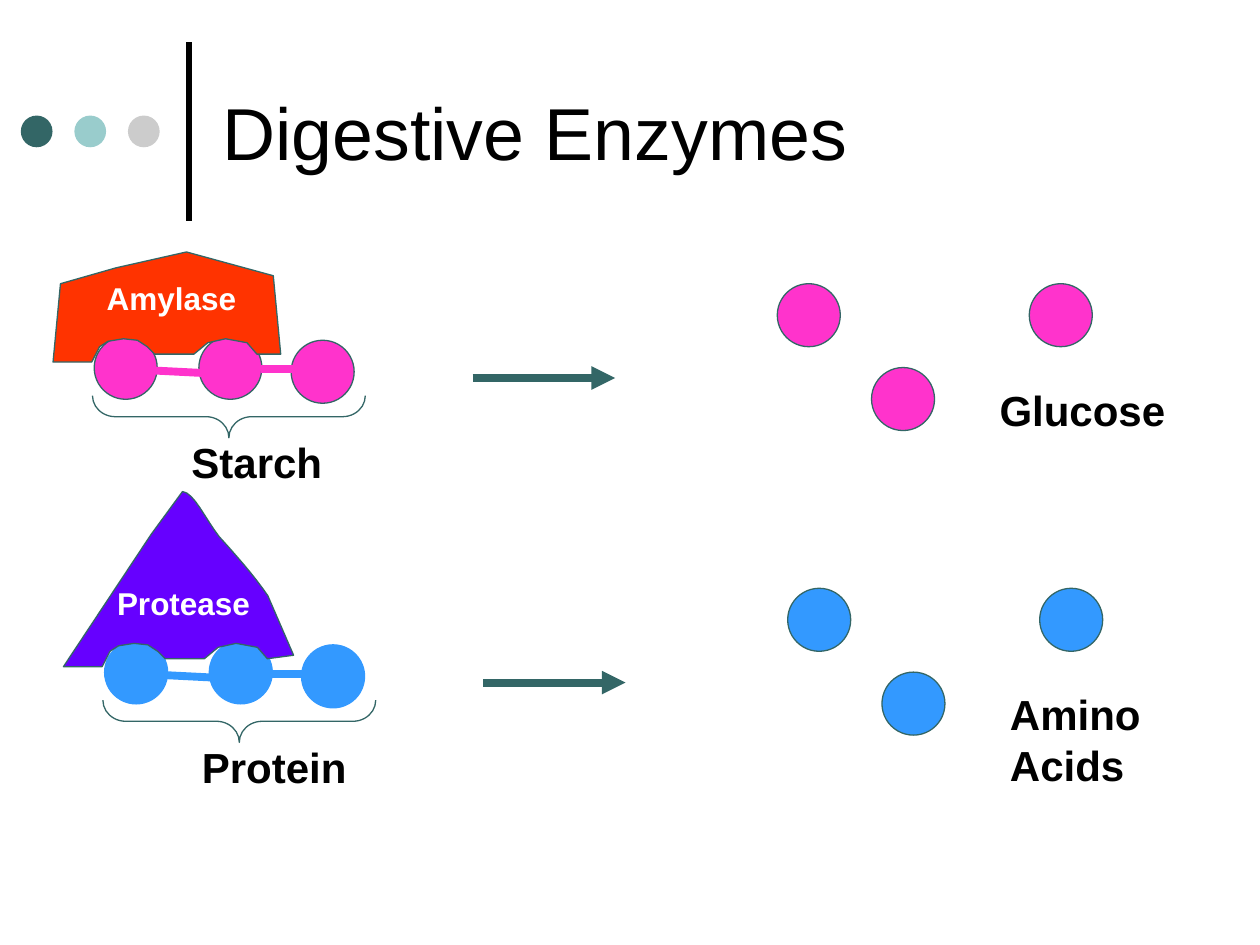
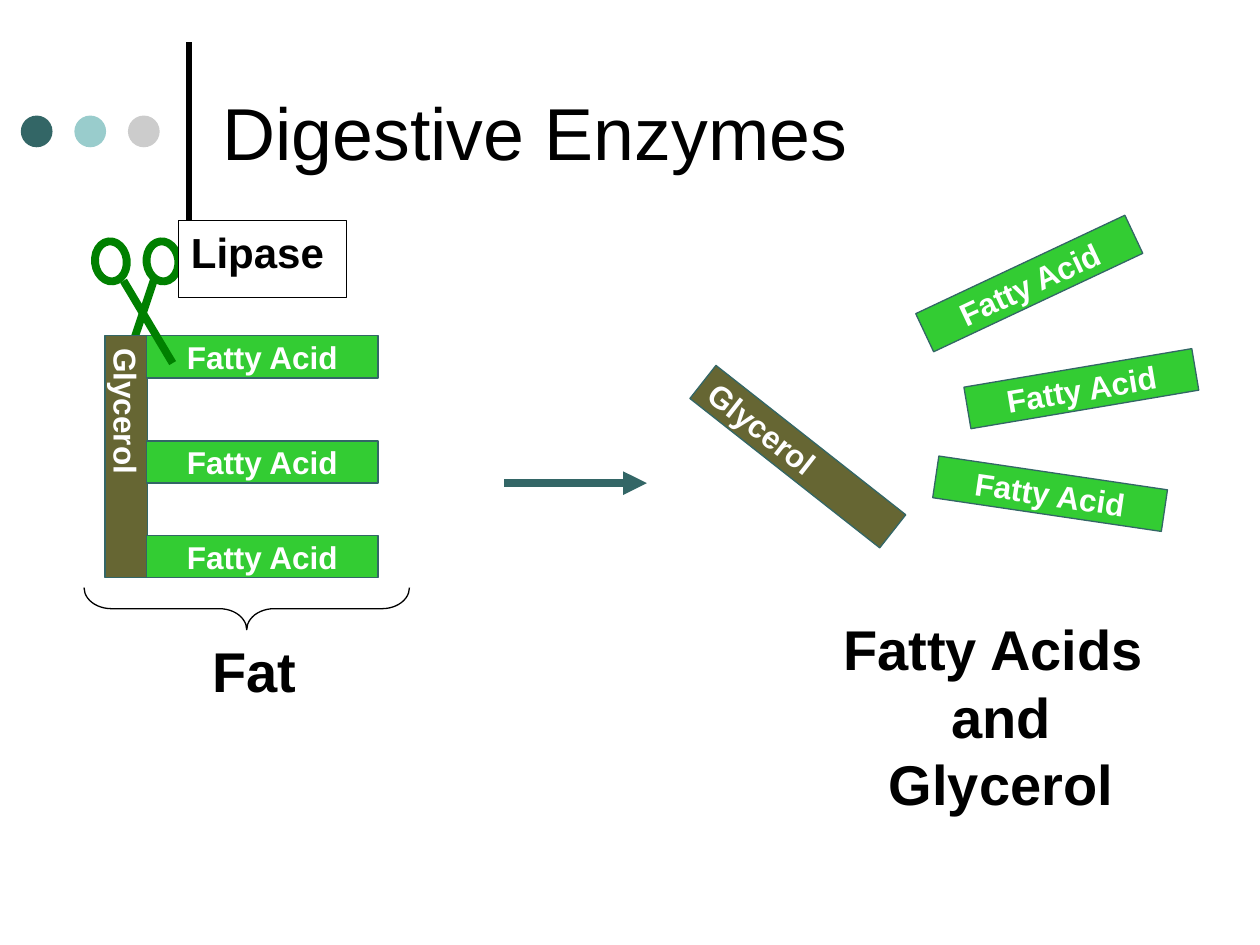
from dataclasses import dataclass
from typing import Optional

from lxml.etree import SubElement
from pptx import Presentation
from pptx.dml.color import RGBColor
from pptx.enum.shapes import MSO_CONNECTOR, MSO_SHAPE as Geo
from pptx.enum.text import MSO_ANCHOR as Anchor, PP_ALIGN as Align
from pptx.oxml.ns import qn
from pptx.shapes.autoshape import Shape
from pptx.slide import Slide
from pptx.text.text import TextFrame
from pptx.util import Cm, Pt

Point = tuple[float, float]
Box = tuple[float, float, float, float]

BLACK = RGBColor(0x00, 0x00, 0x00)
WHITE = RGBColor(0xFF, 0xFF, 0xFF)
TEAL = RGBColor(0x33, 0x66, 0x66)
AQUA = RGBColor(0x99, 0xCC, 0xCC)
GREY = RGBColor(0xCC, 0xCC, 0xCC)
PINK = RGBColor(0xFF, 0x33, 0xCC)
RED = RGBColor(0xFF, 0x33, 0x00)
BLUE = RGBColor(0x33, 0x99, 0xFF)
VIOLET = RGBColor(0x66, 0x00, 0xFF)
OLIVE = RGBColor(0x66, 0x66, 0x33)
GREEN = RGBColor(0x33, 0xCC, 0x33)
DARK_GREEN = RGBColor(0x00, 0x80, 0x00)

THIN, THICK = 0.75, 4.5
UNIT = 1.27
BAR_W, BAR_H, GLYCEROL_H = 4.66, 0.85, 4.87

TITLE = {"size": Pt(42), "bold": False, "color": BLACK}
LARGE = {"size": Pt(32), "bold": True, "color": BLACK}
LABEL = {"size": Pt(24), "bold": True, "color": BLACK}
INNER = {"size": Pt(18), "bold": True, "color": WHITE}


def curve(a: Point, b: Point, c: Point, d: Point, n: int = 8) -> list[Point]:
    """Return n points along a cubic Bezier, leaving out its start."""
    steps = [i / n for i in range(1, n + 1)]
    return [tuple((1 - t) ** 3 * a[k] + 3 * t * (1 - t) ** 2 * b[k]
                  + 3 * t * t * (1 - t) * c[k] + t ** 3 * d[k] for k in (0, 1))
            for t in steps]


BITE = [(1.07, 7.3), (1.85, 7.3), (2.01, 6.99), (2.18, 6.88), (2.49, 6.83),
        (2.77, 6.86), (2.97, 6.99), (3.12, 7.14), (3.91, 7.14), (4.19, 6.91),
        (4.55, 6.83), (4.98, 6.91), (5.18, 7.14)]
AMYLASE_TOP = [(5.66, 7.14), (5.51, 5.56), (3.76, 5.08), (2.34, 5.4), (1.22, 5.72)]
PROTEASE_TOP = [
    (5.71, 7.07), (5.19, 5.87),
    *curve((5.19, 5.87), (4.92, 5.47), (4.51, 5.01), (4.21, 4.68)),
    *curve((4.21, 4.68), (3.93, 4.32), (3.7, 3.79), (3.47, 3.77)),
    (2.84, 4.63)]


@dataclass
class Reaction:
    """An enzyme splitting a chain into units, with its shift on the slide."""
    enzyme: str
    top: list[Point]
    enzyme_color: RGBColor
    substrate: str
    product: str
    color: RGBColor
    chain_edge: RGBColor
    dx: float = 0
    dy: float = 0


@dataclass
class Bar:
    """A molecule bar with its place and rotation."""
    text: str
    x: float
    y: float
    rotation: float = 0


REACTIONS = [
    Reaction("Amylase", AMYLASE_TOP, RED, "Starch", "Glucose", PINK, TEAL),
    Reaction("Protease", PROTEASE_TOP, VIOLET, "Protein", "Amino Acids",
             BLUE, BLUE, 0.21, 6.14),
]
CHAIN = [(4.01, 6.78), (5.87, 6.86), (1.9, 6.78)]
LINKS = [((5.26, 7.44), (5.94, 7.44)), ((3.12, 7.47), (4.11, 7.52))]
FREE_UNITS = [(17.57, 7.41), (20.75, 5.72), (15.67, 5.72)]
BARS = [
    Bar("Glycerol", 2.12, 6.77),
    *[Bar("Fatty Acid", 2.96, y) for y in (6.77, 8.89, 10.8)],
    Bar("Glycerol", 15.66, 6.77, 308.2),
    Bar("Fatty Acid", 18.42, 5.29, 334.8),
    Bar("Fatty Acid", 19.47, 7.41, 350.4),
    Bar("Fatty Acid", 18.84, 9.53, 8.4),
]


def paint(s: Shape, fill: Optional[RGBColor], edge: Optional[RGBColor],
          width: float = THIN) -> Shape:
    """Set fill and outline, and drop the shadow."""
    s.shadow.inherit = False
    if fill is None:
        s.fill.background()
    else:
        s.fill.solid()
        s.fill.fore_color.rgb = fill
    if edge is None:
        s.line.fill.background()
    else:
        s.line.color.rgb = edge
        s.line.width = Pt(width)
    return s


def add_shape(slide: Slide, kind: Geo, box: Box, fill: Optional[RGBColor],
              edge: Optional[RGBColor] = None, width: float = THIN,
              rotation: float = 0) -> Shape:
    """Draw a preset shape."""
    s = slide.shapes.add_shape(kind, *map(Cm, box))
    s.rotation = rotation
    return paint(s, fill, edge, width)


def write(tf: TextFrame, lines: list[str], style: dict, align: Align = Align.LEFT,
          anchor: Anchor = Anchor.TOP, wrap: bool = True) -> None:
    """Fill a text frame, one paragraph for each line."""
    tf.word_wrap, tf.vertical_anchor = wrap, anchor
    for i, line in enumerate(lines):
        p = tf.add_paragraph() if i else tf.paragraphs[0]
        p.alignment = align
        r = p.add_run()
        r.text, r.font.name = line, "Arial"
        for name, value in style.items():
            if name == "color":
                r.font.color.rgb = value
            else:
                setattr(r.font, name, value)


def add_text(slide: Slide, box: Box, lines: list[str], style: dict,
             align: Align = Align.LEFT, anchor: Anchor = Anchor.TOP,
             wrap: bool = True) -> None:
    """Draw a text box."""
    s = slide.shapes.add_textbox(*map(Cm, box))
    write(s.text_frame, lines, style, align, anchor, wrap)


def add_line(slide: Slide, start: Point, end: Point, color: RGBColor,
             width: float = THICK, arrow: bool = False) -> None:
    """Draw a straight line, with an arrowhead at its end if asked."""
    c = slide.shapes.add_connector(MSO_CONNECTOR.STRAIGHT, *map(Cm, start + end))
    c.line.color.rgb = color
    c.line.width = Pt(width)
    sp = c.element.spPr
    if arrow:
        SubElement(sp.find(qn("a:ln")), qn("a:tailEnd"), type="triangle")
    SubElement(sp, qn("a:effectLst"))


def add_brace(slide: Slide, box: Box, color: RGBColor, bend: float) -> None:
    """Draw a brace that points down."""
    s = add_shape(slide, Geo.LEFT_BRACE, box, None, color, rotation=270)
    s.adjustments[0] = bend


def add_bar(slide: Slide, bar: Bar) -> None:
    """Draw a glycerol or fatty acid bar with its name."""
    upright = bar.text == "Glycerol"
    size = (BAR_H, GLYCEROL_H) if upright else (BAR_W, BAR_H)
    s = add_shape(slide, Geo.RECTANGLE, (bar.x, bar.y, *size),
                  OLIVE if upright else GREEN, TEAL, rotation=bar.rotation)
    write(s.text_frame, [bar.text], INNER, Align.CENTER, Anchor.MIDDLE, False)
    if upright:
        s.element.txBody.bodyPr.set("vert", "eaVert")


def add_reaction(slide: Slide, rx: Reaction) -> None:
    """Draw one enzyme reaction, from chain to free units."""
    def at(x: float, y: float) -> Point:
        return x + rx.dx, y + rx.dy

    for spots, edge in ((CHAIN, rx.chain_edge), (FREE_UNITS, TEAL)):
        for spot in spots:
            add_shape(slide, Geo.OVAL, (*at(*spot), UNIT, UNIT), rx.color, edge)
    for start, end in LINKS:
        add_line(slide, at(*start), at(*end), rx.color)
    add_line(slide, at(9.53, 7.62), at(12.4, 7.62), TEAL, arrow=True)

    points = [tuple(map(Cm, at(*pt))) for pt in BITE + rx.top]
    outline = slide.shapes.build_freeform(*points[0])
    outline.add_line_segments(points[1:], close=True)
    paint(outline.convert_to_shape(), rx.enzyme_color, TEAL)

    add_text(slide, (*at(1.9, 5.5), 3.6, 1.02), [rx.enzyme], INNER)
    add_text(slide, (*at(3.61, 8.68), 3.86, 1.27), [rx.substrate], LABEL)
    add_text(slide, (*at(19.9, 7.62), 4.65, 1.27), [rx.product], LABEL)
    add_brace(slide, (*at(4.19, 5.65), 0.85, 5.5), TEAL, 0.54)


def new_slide(prs: Presentation) -> Slide:
    """Add a slide with the dots, the rule and the title."""
    slide = prs.slides.add_slide(prs.slide_layouts[6])
    add_line(slide, (3.81, 4.45), (3.81, 0.84), BLACK, 3)
    for i, color in enumerate((TEAL, AQUA, GREY)):
        add_shape(slide, Geo.OVAL, (0.42 + 1.08 * i, 2.33, 0.64, 0.64), color)
    add_text(slide, (4.23, 0.53, 19.47, 4.23), ["Digestive Enzymes"], TITLE,
             anchor=Anchor.MIDDLE)
    return slide


def build_fat_slide(slide: Slide) -> None:
    """Draw lipase cutting fat into fatty acids and glycerol."""
    add_line(slide, (3.12, 5.59), (2.51, 7.42), DARK_GREEN)
    for bar in BARS:
        add_bar(slide, bar)
    add_line(slide, (10.16, 9.74), (13.04, 9.74), TEAL, arrow=True)
    for x in (2.87, 1.83):
        add_shape(slide, Geo.OVAL, (x, 4.95, 0.81, 0.64), None, DARK_GREEN, THICK, 83.4)
    add_line(slide, (2.49, 5.66), (3.48, 7.32), DARK_GREEN)
    s = add_shape(slide, Geo.RECTANGLE, (3.6, 4.45, 3.39, 1.55), WHITE, BLACK)
    write(s.text_frame, ["Lipase"], LABEL)
    add_text(slide, (4.02, 12.7, 2.21, 1.6), ["Fat"], LARGE, Align.CENTER, wrap=False)
    add_brace(slide, (4.55, 8.99, 0.85, 6.56), BLACK, 0.65)
    add_text(slide, (16.51, 12.27, 7.34, 2.97), ["Fatty Acids ", "and Glycerol"],
             LARGE, Align.CENTER)


def main() -> None:
    """Build and save the presentation."""
    prs = Presentation()
    prs.slide_width, prs.slide_height = Cm(25.4), Cm(19.05)
    slide = new_slide(prs)
    for rx in REACTIONS:
        add_reaction(slide, rx)
    build_fat_slide(new_slide(prs))
    prs.save("out.pptx")


if __name__ == "__main__":
    main()
